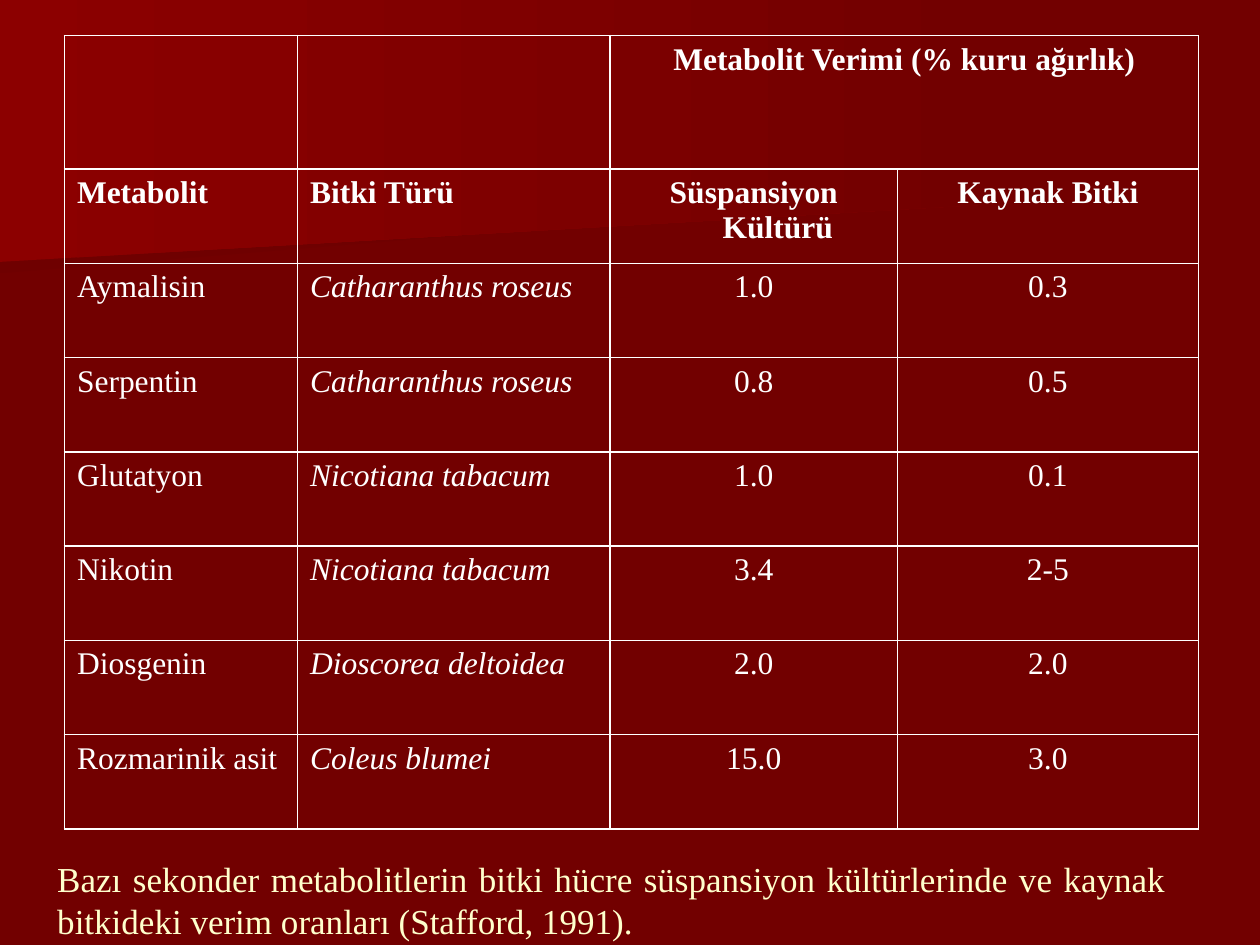
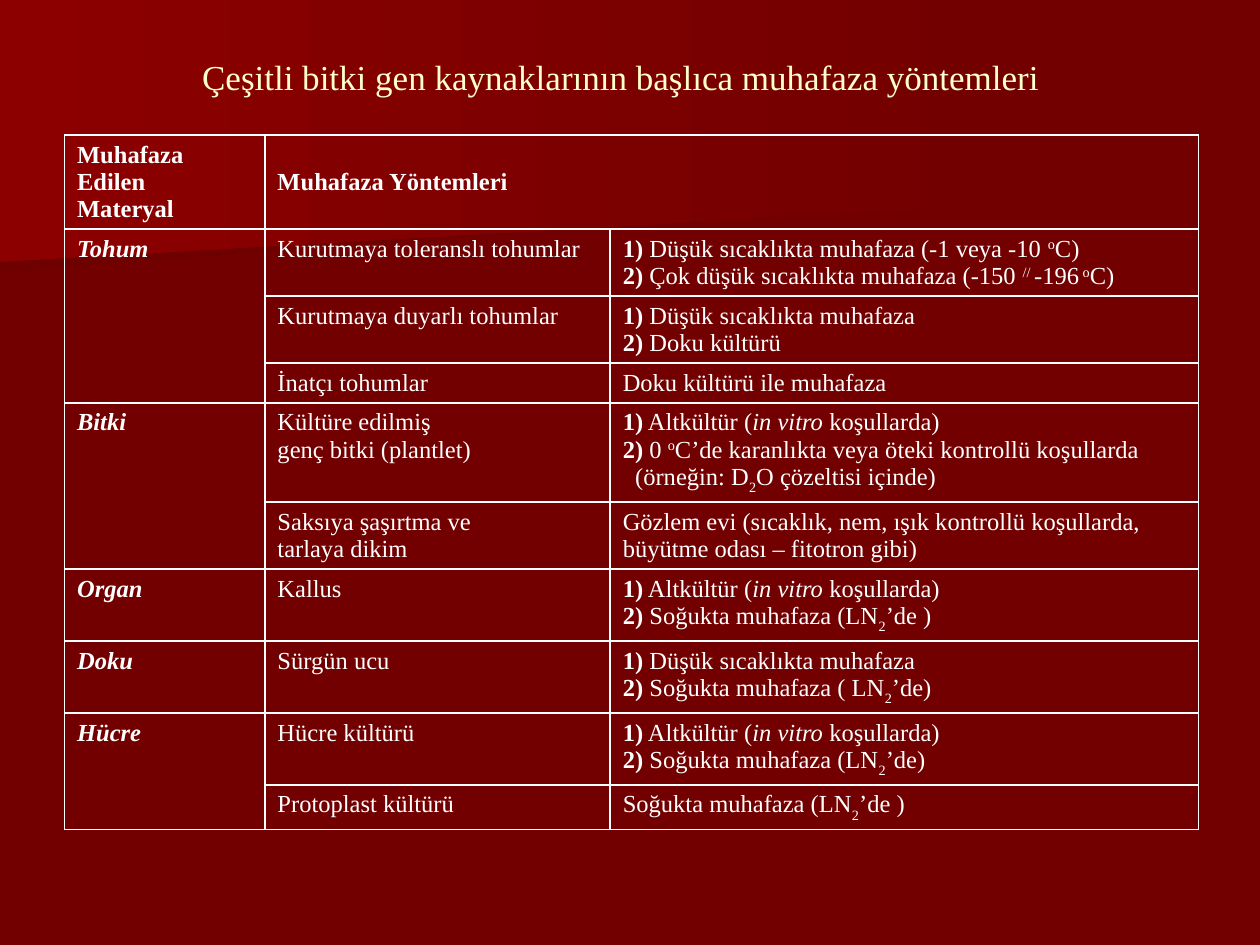
from dataclasses import dataclass

from lxml.etree import SubElement
from pptx import Presentation
from pptx.dml.color import RGBColor
from pptx.enum.text import MSO_ANCHOR as Anchor, MSO_AUTO_SIZE as AutoSize, PP_ALIGN as Align
from pptx.oxml import parse_xml
from pptx.oxml.ns import nsdecls, qn
from pptx.util import Cm, Pt


@dataclass(frozen=True)
class Theme:
    font: str = "Times New Roman"
    spacer_font: str = "Karla"
    background: str = "720000"
    band_dark: str = "6F0000"
    band_bright: str = "8C0000"
    table_ink: str = "FFFFFF"
    title_ink: str = "FFFFCC"
    title_size: int = 20
    spacer_size: int = 44
    yield_size: int = 18
    method_size: int = 14
    border_width: int = 1


STYLE_MARKS = {
    "*": ("bold", True),
    "_": ("italic", True),
    "^": ("baseline", "30000"),
    "~": ("baseline", "-30000"),
}
INDENT_MARK = ">"

LOWER_BAND = [(19.76, 3.89), (0, 5.51), (0, 2.57), (19.79, 2.57), (19.76, 3.25)]
UPPER_BAND = [(20.12, 4.11), (0, 5.28), (0, 0), (20.12, 0)]

YIELD_ROWS = [
    ("", "", "*Metabolit Verimi (% kuru ağırlık)*", ""),
    ("*Metabolit*", "*Bitki Türü*", "*Süspansiyon Kültürü*", "*Kaynak Bitki*"),
    ("Aymalisin", "_Catharanthus roseus_", "1.0", "0.3"),
    ("Serpentin", "_Catharanthus roseus_", "0.8", "0.5"),
    ("Glutatyon", "_Nicotiana tabacum_", "1.0", "0.1"),
    ("Nikotin", "_Nicotiana tabacum_", "3.4", "2-5"),
    ("Diosgenin", "_Dioscorea deltoidea_", "2.0", "2.0"),
    ("Rozmarinik asit", "_Coleus blumei_", "15.0", "3.0"),
]

SUBCULTURE = "*1)* Altkültür (_in vitro_ koşullarda)"
LOW_TEMPERATURE = "*1)* Düşük sıcaklıkta muhafaza"

METHOD_ROWS = [
    ("*Muhafaza\nEdilen\nMateryal*", "*Muhafaza Yöntemleri*", ""),
    ("*_Tohum_*", "Kurutmaya toleranslı tohumlar",
     f"{LOW_TEMPERATURE} (-1 veya -10 ^o^C)\n"
     "*2)* Çok düşük sıcaklıkta muhafaza (-150 ^// ^-196^ o^C)"),
    ("", "Kurutmaya duyarlı tohumlar", f"{LOW_TEMPERATURE}\n*2)* Doku kültürü"),
    ("", "İnatçı tohumlar", "Doku kültürü ile muhafaza"),
    ("*_Bitki_*", "Kültüre edilmiş\ngenç bitki (plantlet)",
     f"{SUBCULTURE}\n"
     "*2)* 0 ^o^C’de karanlıkta veya öteki kontrollü koşullarda\n"
     ">(örneğin: D~2~O çözeltisi içinde)"),
    ("", "Saksıya şaşırtma ve\ntarlaya dikim",
     "Gözlem evi (sıcaklık, nem, ışık kontrollü koşullarda, "
     "büyütme odası – fitotron gibi)"),
    ("*_Organ_*", "Kallus", f"{SUBCULTURE}\n*2)* Soğukta muhafaza (LN~2~’de )"),
    ("*_Doku_*", "Sürgün ucu", f"{LOW_TEMPERATURE}\n*2)* Soğukta muhafaza ( LN~2~’de)"),
    ("*_Hücre_*", "Hücre kültürü", f"{SUBCULTURE}\n*2)* Soğukta muhafaza (LN~2~’de)"),
    ("", "Protoplast kültürü", "Soğukta muhafaza (LN~2~’de )"),
]


def apply_format(target, values):
    for name, value in values.items():
        setattr(target, name, value)


def split_marks(text, active):
    piece = ""
    for character in text:
        if character not in STYLE_MARKS:
            piece += character
            continue
        if piece:
            yield piece, dict(active)
        piece = ""
        name, value = STYLE_MARKS[character]
        if name in active:
            del active[name]
        else:
            active[name] = value
    if piece:
        yield piece, dict(active)


class Deck:
    def __init__(self, theme):
        self.theme = theme
        self.presentation = Presentation()
        apply_format(self.presentation, {"slide_width": Cm(25.4), "slide_height": Cm(19.05)})
        self.slide = None
        fill = self.presentation.slide_master.background.fill
        fill.solid()
        fill.fore_color.rgb = RGBColor.from_string(theme.background)

    def new_slide(self):
        title_only = self.presentation.slide_layouts[5]
        self.slide = self.presentation.slides.add_slide(title_only)

    def master_band(self, points, start_color, shape_id):
        corners = [(Cm(x), Cm(y)) for x, y in points]
        builder = self.slide.shapes.build_freeform(*corners[0])
        builder.add_line_segments(corners[1:])
        shape = builder.convert_to_shape()
        shape.shadow.inherit = False
        shape.line.fill.background()
        shape.fill.gradient()
        shape.fill.gradient_angle = 0
        colors = (start_color, self.theme.background)
        for stop, color, position in zip(shape.fill.gradient_stops, colors, (0, 1)):
            stop.color.rgb = RGBColor.from_string(color)
            stop.position = position
        element = shape.element
        element.nvSpPr.cNvPr.set("id", str(shape_id))
        tree = self.presentation.slide_master.element.cSld.spTree
        tree.insert(shape_id - 99, element)

    def run(self, paragraph, text, size, color, style=None, font=None):
        run = paragraph.add_run()
        run.text = text
        style = dict(style or {})
        baseline = style.pop("baseline", None)
        apply_format(run.font, {"name": font or self.theme.font, "size": Pt(size), **style})
        run.font.color.rgb = RGBColor.from_string(color)
        if baseline:
            run.font._element.set("baseline", baseline)

    def title(self, text, box, paragraph_format, spacer=False):
        theme = self.theme
        shape = self.slide.shapes.title
        apply_format(shape, dict(zip(("left", "top", "width", "height"), map(Cm, box))))
        frame = shape.text_frame
        apply_format(frame, {"word_wrap": True, "auto_size": AutoSize.NONE,
                             "vertical_anchor": Anchor.MIDDLE})
        paragraph = frame.paragraphs[0]
        apply_format(paragraph, paragraph_format)
        self.run(paragraph, text, theme.title_size, theme.title_ink)
        if spacer:
            self.run(paragraph, " ", theme.spacer_size, theme.title_ink, font=theme.spacer_font)

    def cell_text(self, cell, text, size, alignment, hanging):
        active = {}
        for index, line in enumerate(text.split("\n")):
            frame = cell.text_frame
            paragraph = frame.add_paragraph() if index else frame.paragraphs[0]
            paragraph.alignment = alignment
            properties = paragraph._p.get_or_add_pPr()
            if hanging:
                properties.set("marL", str(Cm(hanging)))
                properties.set("indent", str(-Cm(hanging)))
            elif line.startswith(INDENT_MARK):
                properties.set("marL", str(Cm(0.25)))
            for piece, style in split_marks(line.lstrip(INDENT_MARK), active):
                self.run(paragraph, piece, size, self.theme.table_ink, style)

    def cell_borders(self, cell):
        properties = cell._tc.get_or_add_tcPr()
        for index, side in enumerate(("lnL", "lnR", "lnT", "lnB")):
            width = Pt(self.theme.border_width)
            border = parse_xml(f'<a:{side} {nsdecls("a")} w="{width}"/>')
            fill = SubElement(border, qn("a:solidFill"))
            SubElement(fill, qn("a:srgbClr"), val=self.theme.table_ink)
            properties.insert(index, border)

    def table(self, rows, top, widths, heights, size, alignments, merges, hanging=0):
        frame = self.slide.shapes.add_table(
            len(rows), len(widths), Cm(1.3), Cm(top), Cm(sum(widths)), Cm(sum(heights)))
        table = frame.table
        apply_format(table, {"first_row": False, "horz_banding": False})
        for column, width in zip(table.columns, widths):
            column.width = Cm(width)
        for row, height, texts in zip(table.rows, heights, rows):
            row.height = Cm(height)
            for cell, text, alignment in zip(row.cells, texts, alignments):
                cell.fill.background()
                self.cell_borders(cell)
                if text:
                    self.cell_text(cell, text, size, alignment, hanging)
        for first, last in merges:
            table.cell(*first).merge(table.cell(*last))
        return table


def main():
    theme = Theme()
    deck = Deck(theme)

    deck.new_slide()
    deck.master_band(LOWER_BAND, theme.band_dark, 101)
    deck.master_band(UPPER_BAND, theme.band_bright, 102)
    deck.table(
        YIELD_ROWS, 0.72, [4.7, 6.3, 5.79, 6.07], [2.69] + [1.9] * 7, theme.yield_size,
        [Align.JUSTIFY] * 2 + [Align.CENTER] * 2, [((0, 2), (0, 3))], hanging=0.97)
    deck.title(
        "Bazı sekonder metabolitlerin bitki hücre süspansiyon kültürlerinde ve kaynak "
        "bitkideki verim oranları (Stafford, 1991).",
        (0.9, 16.54, 22.86, 3.18), {"alignment": Align.JUSTIFY})

    deck.new_slide()
    methods = deck.table(
        METHOD_ROWS, 2.72, [4.04, 6.96, 11.86],
        [1.9, 1.35, 1.35, 0.8, 2, 1.35, 1.45, 1.45, 1.45, 0.9], theme.method_size,
        [Align.LEFT] * 3,
        [((0, 1), (0, 2)), ((1, 0), (3, 0)), ((4, 0), (5, 0)), ((8, 0), (9, 0))])
    methods.cell(0, 1).vertical_anchor = Anchor.MIDDLE
    deck.title(
        "Çeşitli bitki gen kaynaklarının başlıca muhafaza yöntemleri",
        (1.27, 0.76, 22.86, 1.55),
        {"alignment": Align.CENTER, "line_spacing": Pt(34)}, spacer=True)

    deck.presentation.save("out.pptx")


if __name__ == "__main__":
    main()
